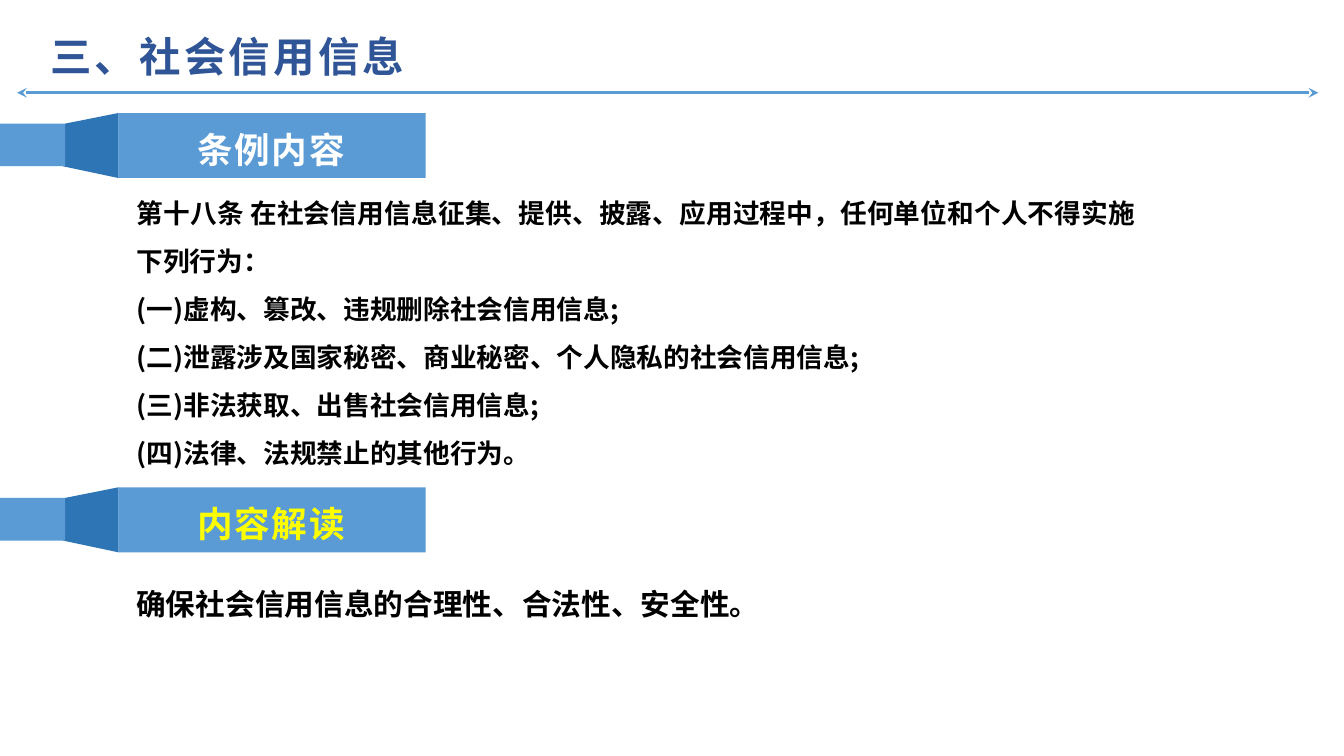
from dataclasses import dataclass

from lxml.etree import SubElement
from pptx import Presentation
from pptx.dml.color import RGBColor
from pptx.enum.shapes import MSO_CONNECTOR, MSO_SHAPE
from pptx.enum.text import MSO_ANCHOR, MSO_AUTO_SIZE, PP_ALIGN
from pptx.oxml.ns import qn
from pptx.util import Emu, Pt

PX = 9144  # 100 px to the inch


@dataclass(frozen=True)
class Theme:
    font: str = "Noto Sans CJK SC"
    title: str = "2F5597"
    ribbon: str = "5B9BD5"
    fold: str = "2E75B6"
    text: str = "000000"
    light: str = "FFFFFF"
    accent: str = "FFFF00"
    title_size: int = 28
    tag_size: int = 24
    note_size: int = 20
    body_size: int = 18


def px(*values):
    return [Emu(v * PX) for v in values]


class Deck:
    def __init__(self, theme, width, height):
        self.theme = theme
        self.prs = Presentation()
        self.prs.slide_width, self.prs.slide_height = px(width, height)
        self.s = self.prs.slides.add_slide(self.prs.slide_layouts[1])

    def set_text(self, sp, box, lines, size, color, align=PP_ALIGN.JUSTIFY, spacing=0):
        """Place a text shape and fill it with one paragraph per line."""
        sp.left, sp.top, sp.width, sp.height = px(*box)
        tf = sp.text_frame
        tf.text = "\n".join(lines)
        tf.word_wrap = True
        tf.auto_size = MSO_AUTO_SIZE.SHAPE_TO_FIT_TEXT
        tf.vertical_anchor = MSO_ANCHOR.TOP
        for p in tf.paragraphs:
            p.alignment = align
            p.line_spacing = 1.5
            p.space_before = Pt(0)
            pPr = p._p.get_or_add_pPr()
            pPr.set("marL", "0")
            pPr.set("indent", "0")
            SubElement(pPr, qn("a:buNone"))
            for r in p.runs:
                r.font.size = Pt(size)
                r.font.bold = True
                r.font.color.rgb = RGBColor.from_string(color)
                r.font.name = self.theme.font
                rPr = r._r.get_or_add_rPr()
                SubElement(rPr, qn("a:ea")).set("typeface", self.theme.font)
                if spacing:
                    rPr.set("spc", str(spacing))
        return tf

    def title(self, box, text):
        tf = self.set_text(self.s.shapes.title, box, [text], self.theme.title_size,
                           self.theme.title, PP_ALIGN.LEFT, spacing=220)
        tf.margin_left = tf.margin_right = Emu(5 * PX)
        tf.margin_top = tf.margin_bottom = Emu(3 * PX)

    def body(self, box, lines):
        self.set_text(self.s.placeholders[1], box, lines,
                      self.theme.body_size, self.theme.text)

    def note(self, box, text):
        sp = self.s.shapes.add_textbox(*px(*box))
        self.set_text(sp, box, [text], self.theme.note_size, self.theme.text)

    def double_arrow(self, x1, x2, y):
        line = self.s.shapes.add_connector(MSO_CONNECTOR.STRAIGHT, *px(x1, y, x2, y))
        line.line.color.rgb = RGBColor.from_string(self.theme.ribbon)
        line.line.width = Pt(2.25)
        ln = line.line._get_or_add_ln()
        for end in ("a:headEnd", "a:tailEnd"):
            SubElement(ln, qn(end)).set("type", "stealth")
        SubElement(line._element.spPr, qn("a:effectLst"))

    def paint(self, sp, color):
        sp.shadow.inherit = False
        sp.fill.solid()
        sp.fill.fore_color.rgb = RGBColor.from_string(color)
        sp.line.fill.background()

    def ribbon(self, top, text, color):
        """Draw a folded ribbon from the left edge with its heading, as a group."""
        shapes = self.s.shapes.add_group_shape().shapes
        banner = shapes.add_shape(MSO_SHAPE.RECTANGLE, *px(111, top, 288, 61))
        self.paint(banner, self.theme.ribbon)

        outline = shapes.build_freeform(59, top + 50, scale=PX)
        outline.add_line_segments(
            [(61, top + 10), (111, top), (111, top + 61)], close=True)
        self.paint(outline.convert_to_shape(), self.theme.fold)

        tail = shapes.add_shape(MSO_SHAPE.RECTANGLE, *px(0, top + 10, 61, 40))
        self.paint(tail, self.theme.ribbon)

        box = (169, top - 11, 170, 71)
        self.set_text(shapes.add_textbox(*px(*box)), box, [text], self.theme.tag_size,
                      color, PP_ALIGN.CENTER, spacing=120)


def main():
    theme = Theme()
    deck = Deck(theme, 1260, 709)
    deck.title((42, 3, 1168, 76), "三、社会信用信息")
    deck.double_arrow(16, 1236, 87)
    deck.ribbon(106, "条例内容", theme.light)
    deck.body((118, 165, 957, 328), [
        "第十八条 在社会信用信息征集、提供、披露、应用过程中，任何单位和个人不得实施下列行为：",
        "(一)虚构、篡改、违规删除社会信用信息;",
        "(二)泄露涉及国家秘密、商业秘密、个人隐私的社会信用信息;",
        "(三)非法获取、出售社会信用信息;",
        "(四)法律、法规禁止的其他行为。",
    ])
    deck.ribbon(457, "内容解读", theme.accent)
    deck.note((118, 528, 957, 60), "确保社会信用信息的合理性、合法性、安全性。")
    deck.prs.save("out.pptx")


if __name__ == "__main__":
    main()
